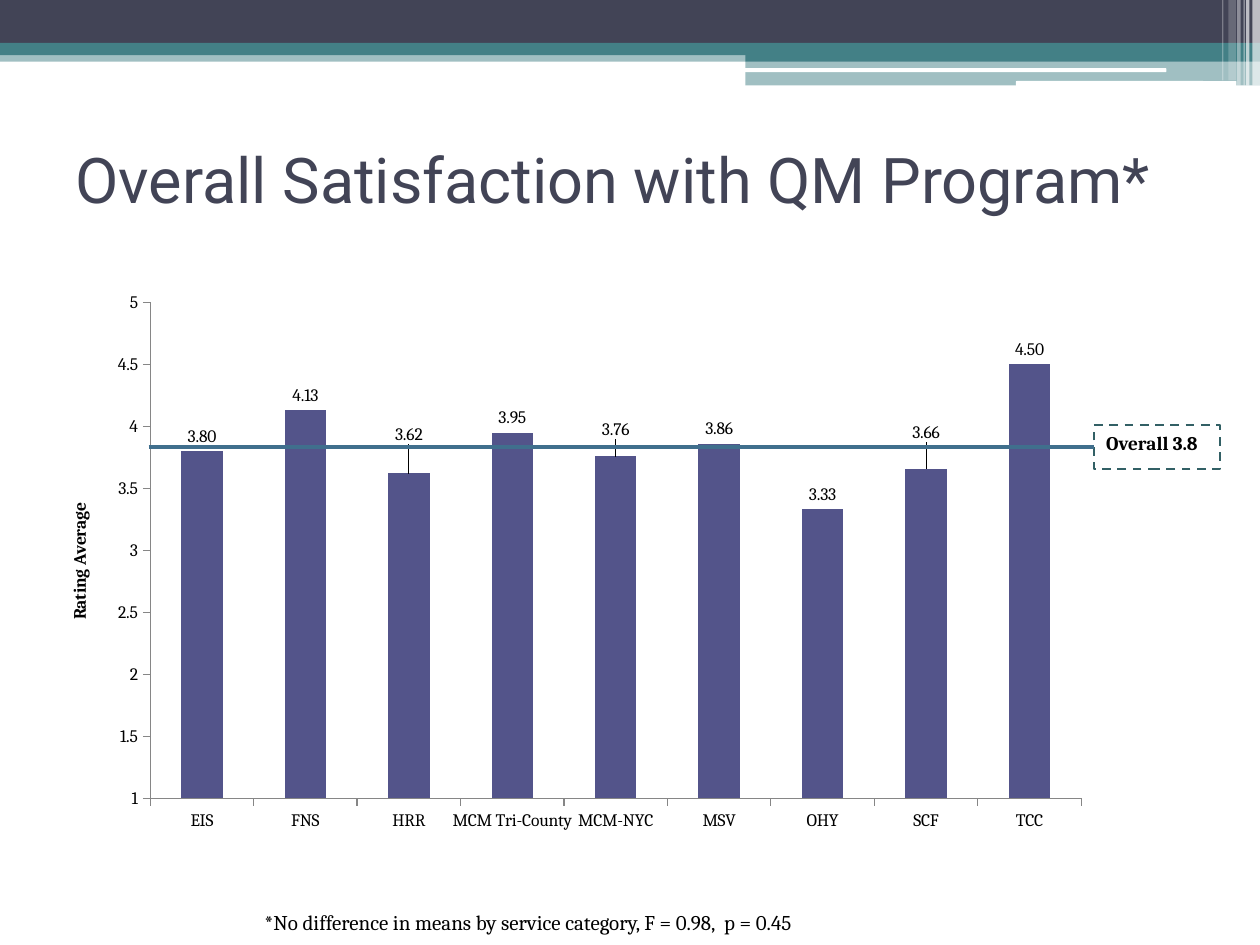
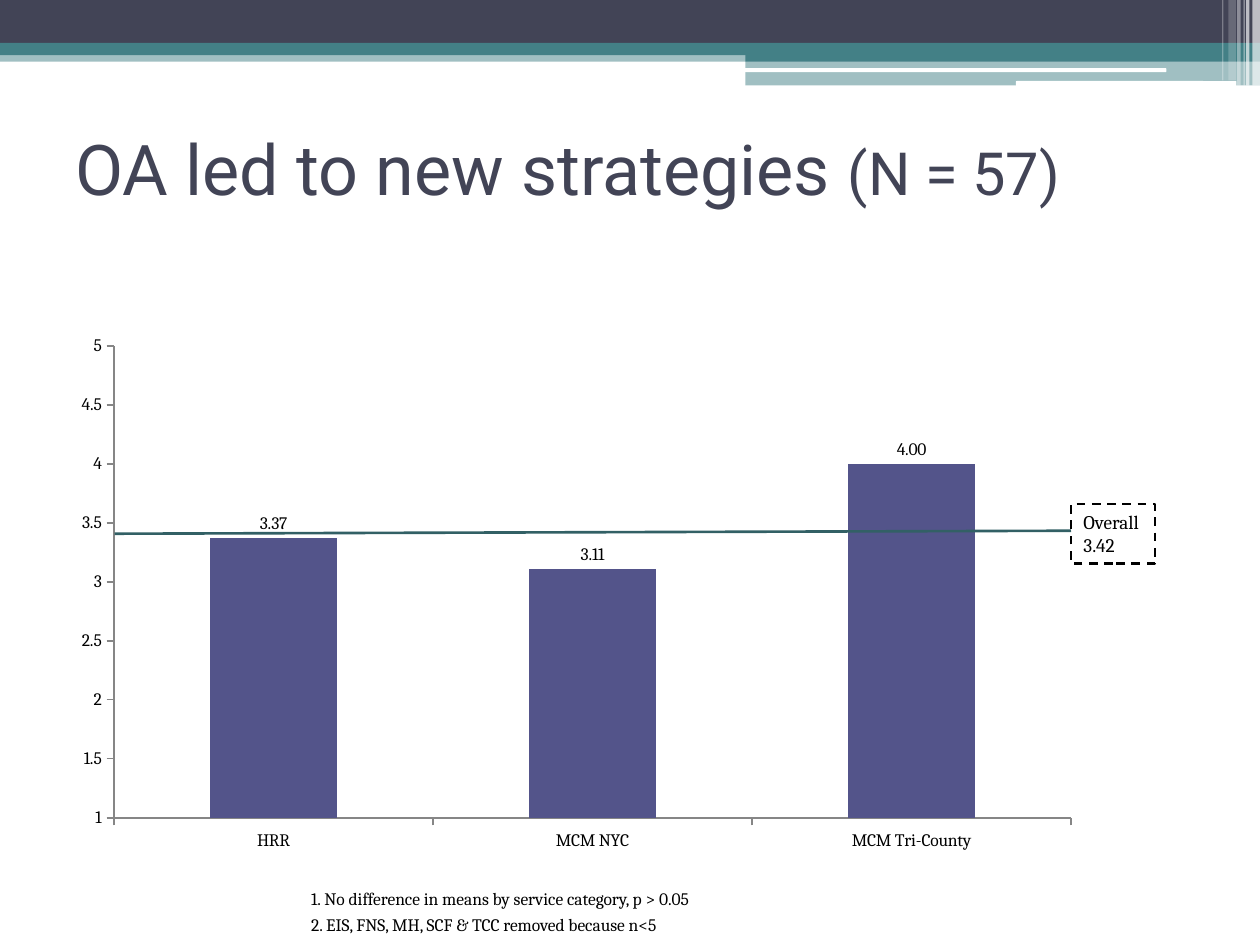
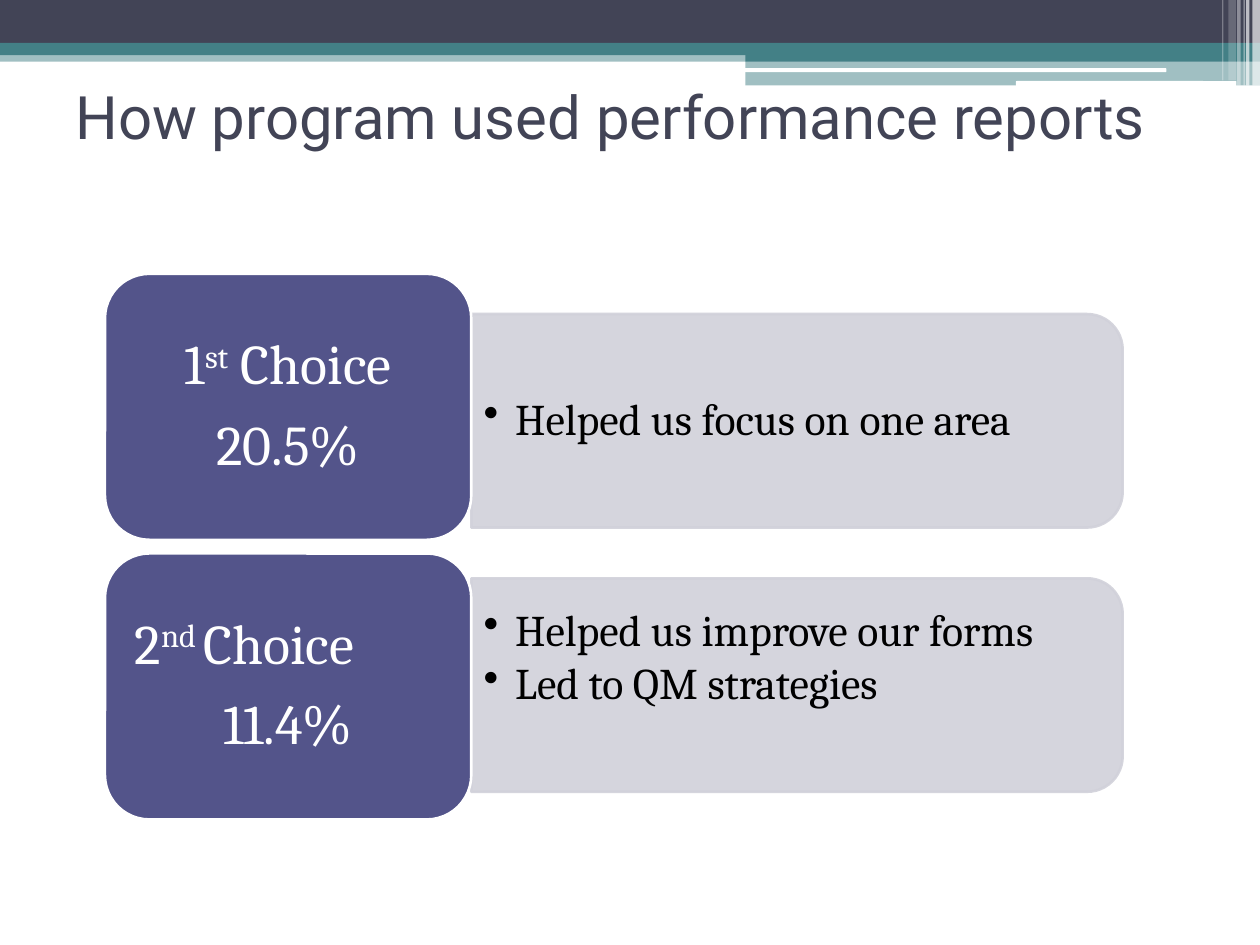
"""Build three slides on satisfaction with the QM program and the use of its reports."""
import lxml.etree
import pptx
import pptx.chart.data
import pptx.dml.color
import pptx.enum.chart
import pptx.enum.dml
import pptx.enum.shapes
import pptx.enum.text
import pptx.oxml
import pptx.oxml.ns
import pptx.util

Pt = pptx.util.Pt
qn = pptx.oxml.ns.qn
SHAPE = pptx.enum.shapes.MSO_SHAPE
ANCHOR = pptx.enum.text.MSO_ANCHOR
LEFT = pptx.enum.text.PP_ALIGN.LEFT
CENTER = pptx.enum.text.PP_ALIGN.CENTER
COLORS = {
    "ink": "424456", "teal": "438086", "white": "FFFFFF", "black": "000000",
    "bar": "53548A", "panel": "D1D1DA", "steel": "406F8D", "pine": "326065", "axis": "868686",
}
BANDS = [
    (0, 28.8, 720, 6.5, "teal", 50),
    (0, 0, 720, 24.5, "ink", 100),
    (0, 24.5, 720, 7, "teal", 100),
    (426, 28, 294, 7.2, "teal", 100),
    (426, 35.2, 294, 13.6, "teal", 50),
]
RULES = [(425.5, 39, 241, 2.2), (580.5, 46.3, 126, 2.8)]
STRIPES = [
    (715.7, 4.3, 49, 65), (712, 2, 49, 65), (710.6, 0.7, 49, 60),
    (707, 2, 49, 40), (702, 4.3, 46, 20), (698.4, 0.7, 46, 30),
]
CHART_PLACE = (36, 162, 648, 340.5)


def rgb(name):
    return pptx.dml.color.RGBColor.from_string(COLORS[name])


def apply(target, values):
    for key, value in values.items():
        setattr(target, key, value)


def manual_layout(**values):
    layout = lxml.etree.Element(qn("c:layout"))
    manual = lxml.etree.SubElement(layout, qn("c:manualLayout"))
    for key, value in values.items():
        lxml.etree.SubElement(manual, qn("c:" + key), val=str(value))
    return layout


class Slides:
    def __init__(self):
        self.deck = pptx.Presentation()
        apply(self.deck, {"slide_width": Pt(720), "slide_height": Pt(540)})
        self.page = None

    def new_page(self, title, top, size):
        self.page = self.deck.slides.add_slide(self.deck.slide_layouts[6])
        for *place, color, opacity in BANDS:
            self.shape(SHAPE.RECTANGLE, place, color, opacity=opacity)
        for place in RULES:
            self.shape(SHAPE.ROUNDED_RECTANGLE, place, "white")
        for left, width, height, opacity in STRIPES:
            self.shape(SHAPE.RECTANGLE, (left, 0, width, height), "white", opacity=opacity)
        self.text((36, top, 648, 84), [title], size, "ink", font="Roboto", anchor=ANCHOR.MIDDLE)

    def shape(self, kind, place, color, line=None, opacity=100, rotation=0):
        box = self.page.shapes.add_shape(kind, *map(Pt, place))
        box.shadow.inherit = False
        box.rotation = rotation
        box.fill.solid()
        box.fill.fore_color.rgb = rgb(color)
        self.outline(box, line, 1.5)
        if opacity < 100:
            for tint in box._element.spPr.iter(qn("a:srgbClr")):
                lxml.etree.SubElement(tint, qn("a:alpha"), val=str(opacity * 1000))
        return box

    def outline(self, box, color, width):
        if color is None:
            box.line.fill.background()
        else:
            box.line.color.rgb = rgb(color)
            box.line.width = Pt(width)

    def text(self, place, lines, size, color="black", **style):
        box = self.page.shapes.add_textbox(*map(Pt, place))
        self.fill_text(box, lines, size, color, **style)
        return box

    def fill_text(self, box, lines, size, color="black", font="Cambria", bold=False,
                  anchor=ANCHOR.TOP, insets=(7.2, 3.6, 7.2, 3.6), aligns=(), bullet=None,
                  gap=0, spacing=None):
        frame = box.text_frame
        sides = ("margin_left", "margin_top", "margin_right", "margin_bottom")
        apply(frame, {"word_wrap": True, "vertical_anchor": anchor, **dict(zip(sides, map(Pt, insets)))})
        for index, line in enumerate(lines):
            para = frame.add_paragraph() if index else frame.paragraphs[0]
            if bullet:
                properties = para._p.get_or_add_pPr()
                properties.set("marL", str(Pt(18)))
                properties.set("indent", str(-Pt(18)))
                lxml.etree.SubElement(properties, qn("a:buChar"), char=bullet)
            align = aligns[index] if aligns else LEFT
            apply(para, {"alignment": align, "line_spacing": spacing, "space_after": Pt(gap)})
            for part in [line] if isinstance(line, str) else line:
                words, changes = (part, {}) if isinstance(part, str) else part
                span = para.add_run()
                span.text = words
                apply(span.font, {"name": font, "size": Pt(changes.get("size", size)), "bold": bold})
                span.font.color.rgb = rgb(color)
                if "baseline" in changes:
                    span._r.get_or_add_rPr().set("baseline", str(changes["baseline"]))

    def callout(self, place, lines, color, bold=False):
        box = self.text(place, lines, 11, bold=bold)
        self.outline(box, color, 1.25)
        box.line.dash_style = pptx.enum.dml.MSO_LINE.DASH
        return box

    def line(self, start, end, color, width, target=None):
        straight = pptx.enum.shapes.MSO_CONNECTOR.STRAIGHT
        rule = self.page.shapes.add_connector(straight, *map(Pt, start + end))
        if target is not None:
            rule.end_connect(target, 1)
        self.outline(rule, color, width)
        lxml.etree.SubElement(rule._element.spPr, qn("a:effectLst"))

    def chart(self, ratings, plot_area, axis_title=None, raised=None):
        data = pptx.chart.data.CategoryChartData()
        data.categories = list(ratings)
        data.add_series("Series 1", list(ratings.values()))
        kind = pptx.enum.chart.XL_CHART_TYPE.COLUMN_CLUSTERED
        chart = self.page.shapes.add_chart(kind, *map(Pt, CHART_PLACE), data).chart
        apply(chart, {"has_legend": False, "has_title": False})
        self.chart_font(chart.font)
        area = chart._chartSpace.chart.plotArea
        for old in area.findall(qn("c:layout")):
            area.remove(old)
        modes = {"layoutTarget": "inner", "xMode": "edge", "yMode": "edge"}
        area.insert(0, manual_layout(**modes, **dict(zip("xywh", plot_area))))

        for axis in (chart.category_axis, chart.value_axis):
            apply(axis, {"has_major_gridlines": False,
                         "major_tick_mark": pptx.enum.chart.XL_TICK_MARK.OUTSIDE,
                         "minor_tick_mark": pptx.enum.chart.XL_TICK_MARK.NONE})
            axis.format.line.color.rgb = rgb("axis")
            self.chart_font(axis.tick_labels.font)
        apply(chart.value_axis, {"minimum_scale": 1, "maximum_scale": 5, "major_unit": 0.5})
        apply(chart.value_axis.tick_labels, {"number_format": "General", "number_format_is_linked": False})
        if axis_title:
            frame = chart.value_axis.axis_title.text_frame
            frame.text = axis_title
            self.chart_font(frame.paragraphs[0].runs[0].font, bold=True)

        apply(chart.plots[0], {"gap_width": 150, "vary_by_categories": False})
        series = chart.plots[0].series[0]
        series.format.fill.solid()
        series.format.fill.fore_color.rgb = rgb("bar")
        outside = pptx.enum.chart.XL_LABEL_POSITION.OUTSIDE_END
        labels = series.data_labels
        apply(labels, {"show_value": True, "number_format": "#,##0.00",
                       "number_format_is_linked": False, "position": outside})
        self.chart_font(labels.font)
        shifts = raised or {}
        for index in shifts:
            label = series.points[index].data_label
            label.position = outside
            self.chart_font(label.font)
        for label in series._element.iter(qn("c:dLbl")):
            index = int(label.find(qn("c:idx")).get("val"))
            label.insert(1, manual_layout(x=0, y=shifts[index]))

    def chart_font(self, font, bold=False):
        apply(font, {"name": "Cambria", "size": Pt(10), "bold": bold})
        font.color.rgb = rgb("black")

    def choice(self, top, heading, reasons, panel_shift, aligns, bottom_inset=3.6):
        left, width, height = 269.3, 372.2, 122
        panel_top = top + panel_shift
        turned = (left + (width - height) / 2, panel_top - (width - height) / 2, height, width)
        self.shape(SHAPE.ROUND_2_SAME_RECTANGLE, turned, "panel", "panel", 90, 90)
        self.text((left, panel_top + 6, width - 6, height - 12), reasons, 25, anchor=ANCHOR.MIDDLE,
                  insets=(7.2, 3.6, 7.2, bottom_inset), bullet="•", gap=3.75, spacing=0.9)
        card = self.shape(SHAPE.ROUNDED_RECTANGLE, (60, top, 209.3, 152), "bar", "white")
        self.fill_text(card, heading, 32, "white", anchor=ANCHOR.MIDDLE, insets=(9.6, 4.8, 9.6, 4.8),
                       aligns=aligns, gap=11.2, spacing=0.9)


def main():
    slides = Slides()

    slides.new_page("Overall Satisfaction with QM Program*", 60, 36)
    satisfaction = {"EIS": 3.8, "FNS": 4.13, "HRR": 3.62, "MCM Tri-County": 3.95, "MCM-NYC": 3.76,
                    "MSV": 3.86, "OHY": 3.33, "SCF": 3.66, "TCC": 4.5}
    slides.chart(satisfaction, (0.077, 0.032, 0.821, 0.832), "Rating Average",
                 {2: -0.04, 4: -0.02, 7: -0.035})
    slides.text((144, 516, 353, 22),
                ["*No difference in means by service category, F = 0.98,  p = 0.45"], 12)
    overall = slides.callout((625, 243, 72, 25), ["Overall 3.8"], "pine", bold=True)
    slides.line((85, 255.5), (625, 255.5), "steel", 2.25, overall)

    slides.new_page(["OA led to new strategies ", ("(N = 57)", {"size": 34})], 54, 40)
    strategies = {"HRR": 3.37, "MCM NYC": 3.11, "MCM Tri-County": 4}
    slides.chart(strategies, (0.045, 0.105, 0.844, 0.792))
    slides.text((162, 504, 292, 50),
                ["1. No difference in means by service category, p > 0.05",
                 "2. EIS, FNS, MH, SCF & TCC removed because n<5"],
                10, insets=(15.8, 3.6, 7.2, 3.6), gap=3)
    slides.line((65.5, 305), (612, 303.3), "pine", 1.5)
    slides.callout((612, 288, 48, 34), ["Overall", "3.42"], "black")

    slides.new_page("How program used performance reports", 24, 34.2)
    raised, level = {"baseline": 30000}, {"baseline": 0}
    slides.choice(156.5, [["1", ("st", raised), (" Choice", level)], "20.5%"],
                  ["Helped us focus on one area"], 23, (CENTER, CENTER))
    slides.choice(316.3, [["2", ("nd ", raised), ("Choice", level)], "11.4%"],
                  ["Helped us improve our forms", "Led to QM strategies"], 14.2,
                  (LEFT, CENTER), 33.6)

    slides.deck.save("out.pptx")


if __name__ == "__main__":
    main()
